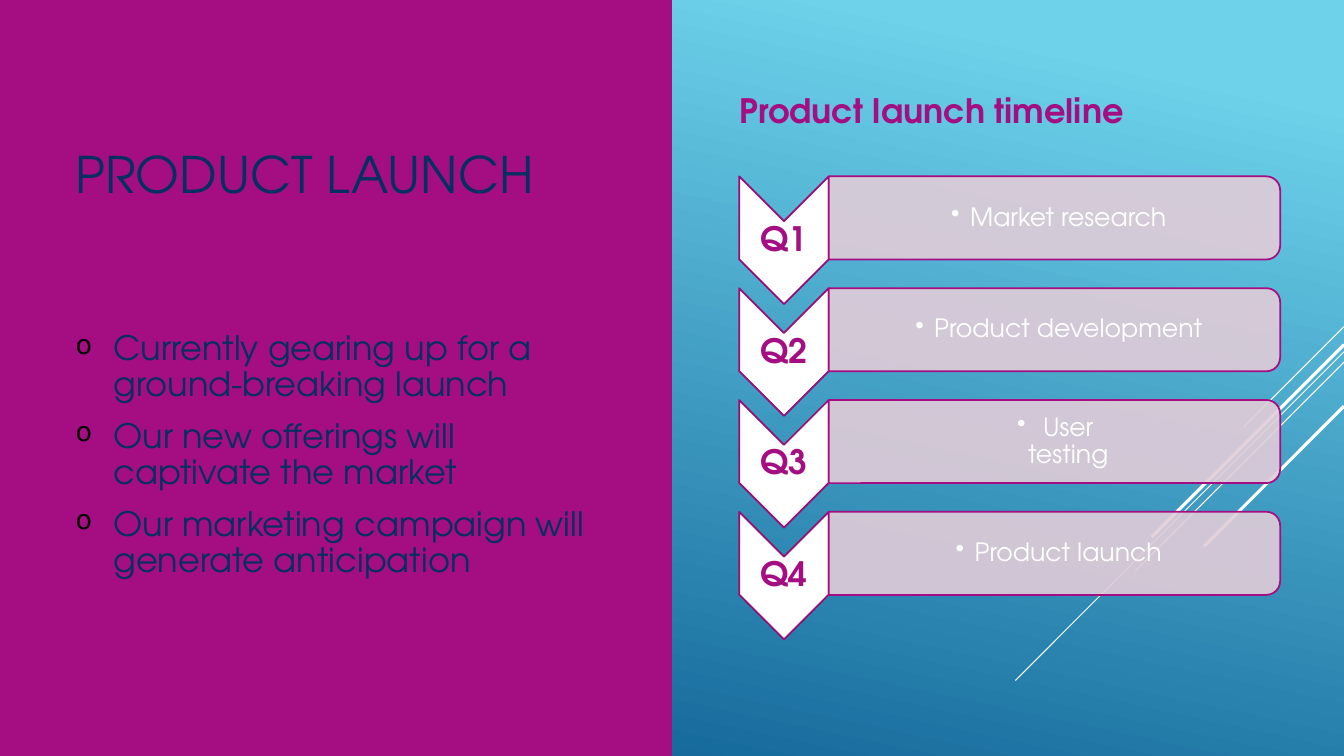
import pptx
import pptx.util
import pptx.dml.color
import pptx.enum.shapes
import pptx.enum.text
import pptx.oxml
import pptx.oxml.ns
import lxml.etree

Pt = pptx.util.Pt
RGB = pptx.dml.color.RGBColor.from_string
Kind = pptx.enum.shapes.MSO_SHAPE
Anchor = pptx.enum.text.MSO_ANCHOR
Align = pptx.enum.text.PP_ALIGN
qn = pptx.oxml.ns.qn

hues = {
    "sky": "6ED2EB", "sea": "06588E", "plum": "A50E82", "edge": "960D76",
    "navy": "052F61", "mist": "E1CCD8", "white": "FFFFFF", "black": "000000",
}

deck = pptx.Presentation()
deck.slide_width, deck.slide_height = Pt(960), Pt(540)
slide = deck.slides.add_slide(deck.slide_layouts[6])

back = slide.background.fill
back.gradient()
back.gradient_angle = 258
for stop, (place, hue) in zip(back.gradient_stops, [(0.1, "sky"), (1, "sea")]):
    stop.position = place
    stop.color.rgb = RGB(hues[hue])


def shape(kind, mid, size, fill, line=None, turn=0):
    w, h = size
    item = slide.shapes.add_shape(
        kind, Pt(mid[0] - w / 2), Pt(mid[1] - h / 2), Pt(w), Pt(h))
    item.shadow.inherit = False
    item.rotation = turn
    item.fill.solid()
    item.fill.fore_color.rgb = RGB(hues[fill])
    if line:
        item.line.color.rgb = RGB(hues[line])
        item.line.width = Pt(1.25)
    else:
        item.line.fill.background()
    return item


def text(words, box, size, hue, bold=False, anchor=Anchor.MIDDLE, inset=(0, 0),
         align=Align.LEFT, lead=1, gaps=(0, 0), mark=None):
    frame = slide.shapes.add_textbox(*[Pt(n) for n in box]).text_frame
    frame.word_wrap = True
    frame.vertical_anchor = anchor
    frame.margin_left = Pt(inset[0])
    frame.margin_top = frame.margin_right = frame.margin_bottom = Pt(inset[1])
    frame.text = words
    for para in frame.paragraphs:
        para.alignment = align
        para.line_spacing = lead
        para.space_before, para.space_after = Pt(gaps[0]), Pt(gaps[1])
        for run in para.runs:
            run.font.name = "TeX Gyre Adventor"
            run.font.size = Pt(size)
            run.font.bold = bold
            run.font.color.rgb = RGB(hues[hue])
        if mark:
            sign, dent, tint, scale = mark
            props = para._p.get_or_add_pPr()
            props.set("marL", str(Pt(dent)))
            props.set("indent", str(Pt(-dent)))
            color = lxml.etree.SubElement(props, qn("a:buClr"))
            lxml.etree.SubElement(color, qn("a:srgbClr"), val=hues[tint])
            lxml.etree.SubElement(props, qn("a:buSzPct"), val=str(scale * 1000))
            lxml.etree.SubElement(props, qn("a:buChar"), char=sign)


for top, run, width in [(233.3, 72, 0.75), (251.3, 234.7, 0.75), (258.7, 149, 0.75),
                        (246.2, 137.5, 2.25), (290.2, 100, 2.25)]:
    ray = slide.shapes.add_connector(
        pptx.enum.shapes.MSO_CONNECTOR.STRAIGHT,
        Pt(960), Pt(top), Pt(960 - run), Pt(top + run))
    ray.line.color.rgb = RGB(hues["white"])
    ray.line.width = Pt(width)
    lxml.etree.SubElement(ray._element.spPr, qn("a:effectLst"))

shape(Kind.RECTANGLE, (240, 270), (480, 540), "plum")
text("PRODUCT LAUNCH", (54, 3, 407, 142.5), 36, "navy", anchor=Anchor.BOTTOM)
text("Product launch timeline", (528, 37.5, 387, 82), 24, "plum", bold=True,
     gaps=(4.8, 6))
text("Currently gearing up for a ground-breaking launch\n"
     "Our new offerings will captivate the market\n"
     "Our marketing campaign will generate anticipation",
     (54, 175.7, 387, 299.5), 24, "navy", lead=0.9, gaps=(4.8, 6),
     mark=("o", 27, "black", 80))

tasks = ["Market research", "Product development", " User \vtesting", "Product launch"]
for i, task in enumerate(tasks):
    top = 126 + i * 79.85
    shape(Kind.CHEVRON, (560, top + 45.6), (91.2, 64), "white", "edge", 90)
    text(f"Q{i + 1}", (528, top + 32, 64, 27.5), 24, "plum", bold=True,
         inset=(1.2, 1.2), align=Align.CENTER, lead=0.9)
    bar = shape(Kind.ROUND_2_SAME_RECTANGLE, (753.2, top + 29.7), (59.4, 322.4),
                "mist", "plum", 90)
    tone = bar._element.spPr.find(qn("a:solidFill"))[0]
    lxml.etree.SubElement(tone, qn("a:alpha"), val="90000")
    text(task, (592, top + 2.9, 319.5, 53.5), 18, "white", inset=(10, 0.9),
         align=Align.CENTER, lead=0.9, mark=("•", 13.5, "white", 100))

deck.save("out.pptx")
